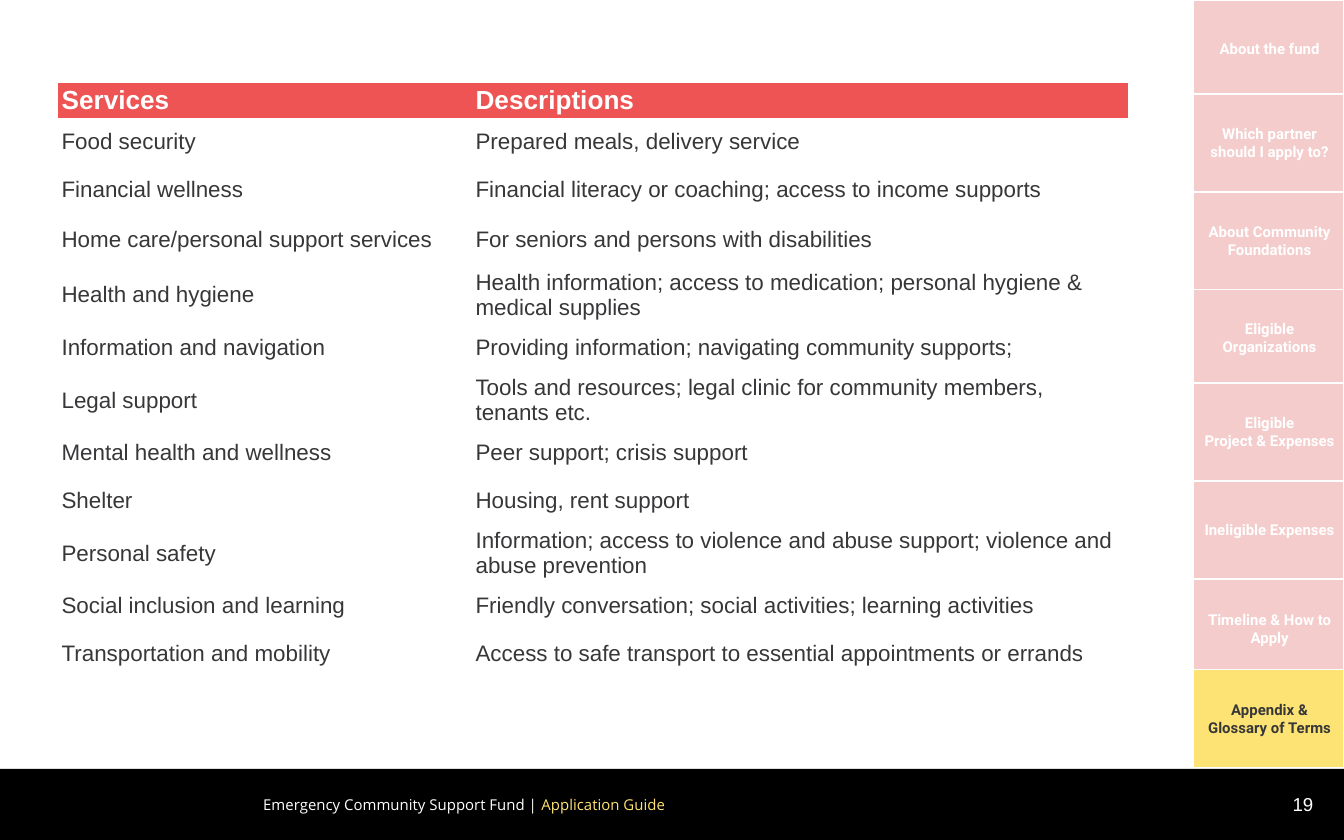
from pptx import Presentation
from pptx.dml.color import RGBColor
from pptx.enum import shapes, text
from pptx.oxml import ns
from pptx.util import Pt

WHITE = RGBColor(0xFF, 0xFF, 0xFF)
BLACK = RGBColor(0x00, 0x00, 0x00)
CHARCOAL = RGBColor(0x37, 0x37, 0x39)
PINK = RGBColor(0xF4, 0xCC, 0xCC)
YELLOW = RGBColor(0xFD, 0xE3, 0x73)
GUIDE_YELLOW = RGBColor(0xFF, 0xE3, 0x74)
RED = RGBColor(0xEE, 0x54, 0x54)
PLAIN_TABLE = "{2D5ABB26-0587-4C30-8999-92F81FD0307C}"

TABS = [
    (0, "About the fund"),
    (50.4, "Which partner should I apply to?"),
    (103, "About Community Foundations"),
    (155, "Eligible\nOrganizations"),
    (205.2, "Eligible\nProject & Expenses"),
    (257.8, "Ineligible Expenses"),
    (310.6, "Timeline & How to Apply"),
    (358.8, "Appendix & Glossary of Terms"),
]

HEADER, SINGLE, MEDIUM, DOUBLE = 18.8, 25.5, 28.2, 31
SERVICES = [
    (HEADER, "Services", "Descriptions"),
    (SINGLE, "Food security", "Prepared meals, delivery service"),
    (SINGLE, "Financial wellness", "Financial literacy or coaching; access to income supports"),
    (MEDIUM, "Home care/personal support services", "For seniors and persons with disabilities"),
    (DOUBLE, "Health and hygiene",
     "Health information; access to medication; personal hygiene & medical supplies"),
    (SINGLE, "Information and navigation", "Providing information; navigating community supports;"),
    (DOUBLE, "Legal support",
     "Tools and resources; legal clinic for community members, tenants etc."),
    (SINGLE, "Mental health and wellness", "Peer support; crisis support"),
    (SINGLE, "Shelter", "Housing, rent support"),
    (DOUBLE, "Personal safety",
     "Information; access to violence and abuse support; violence and abuse prevention"),
    (SINGLE, "Social inclusion and learning",
     "Friendly conversation; social activities; learning activities"),
    (SINGLE, "Transportation and mobility",
     "Access to safe transport to essential appointments or errands"),
]


class GuidePage:
    def __init__(self, deck):
        self.page = deck.slides.add_slide(deck.slide_layouts[6])
        self.body_font = "Arial"
        self.tab_font = "Roboto"
        self.footer_font = "Open Sans"

    def style(self, span, font, size, color, bold=False):
        span.font.name = font
        span.font.size = Pt(size)
        span.font.color.rgb = color
        span.font.bold = bold

    def block(self, left, top, width, height, fill, outline=None):
        box = self.page.shapes.add_shape(
            shapes.MSO_SHAPE.RECTANGLE, Pt(left), Pt(top), Pt(width), Pt(height))
        box.shadow.inherit = False
        box.fill.solid()
        box.fill.fore_color.rgb = fill
        if outline is None:
            box.line.fill.background()
        else:
            box.line.color.rgb = outline
            box.line.width = Pt(0.75)

    def label(self, left, top, width, height, pieces, font, size, bold=False,
              align=text.PP_ALIGN.LEFT, anchor=text.MSO_ANCHOR.MIDDLE):
        box = self.page.shapes.add_textbox(Pt(left), Pt(top), Pt(width), Pt(height))
        frame = box.text_frame
        frame.word_wrap = True
        frame.vertical_anchor = anchor
        frame.margin_left = frame.margin_right = Pt(7.2)
        frame.margin_top = frame.margin_bottom = Pt(7.2)
        para = frame.paragraphs[0]
        para.alignment = align
        for words, color in pieces:
            lines = words.split("\n")
            for number, line in enumerate(lines):
                if number:
                    para.add_line_break()
                span = para.add_run()
                span.text = line
                self.style(span, font, size, color, bold)

    def tab(self, top, words, active):
        self.block(639.4, top, 80.6, 52.5, YELLOW if active else PINK, WHITE)
        self.label(637, top + 5.8, 86.4, 40.3, [(words, CHARCOAL if active else WHITE)],
                   self.tab_font, 8, True, text.PP_ALIGN.CENTER)

    def footer(self, number):
        self.block(-5.8, 412, 733, 40.3, BLACK)
        self.label(133.9, 421.2, 359.3, 21.6,
                   [("Emergency Community Support Fund | ", WHITE),
                    ("Application Guide", GUIDE_YELLOW)],
                   self.footer_font, 8, anchor=text.MSO_ANCHOR.TOP)
        self.label(667.4, 413.3, 43.2, 34.6, [(number, WHITE)],
                   self.body_font, 10, align=text.PP_ALIGN.RIGHT)

    def table(self, left, top, widths, rows):
        frame = self.page.shapes.add_table(
            len(rows), len(widths), Pt(left), Pt(top),
            Pt(sum(widths)), Pt(sum(row[0] for row in rows)))
        for style_id in frame.element.iter(ns.qn("a:tableStyleId")):
            style_id.text = PLAIN_TABLE
        grid = frame.table
        grid.horz_banding = False
        for column, width in zip(grid.columns, widths):
            column.width = Pt(width)
        for index, (height, *entries) in enumerate(rows):
            grid.rows[index].height = Pt(height)
            for cell, words in zip(grid.rows[index].cells, entries):
                self.fill_cell(cell, words, index == 0)

    def fill_cell(self, cell, words, heading):
        cell.margin_left = cell.margin_right = Pt(2)
        cell.margin_top = cell.margin_bottom = Pt(0)
        cell.vertical_anchor = text.MSO_ANCHOR.MIDDLE
        cell.text_frame.text = words
        span = cell.text_frame.paragraphs[0].runs[0]
        if heading:
            cell.fill.solid()
            cell.fill.fore_color.rgb = RED
            self.style(span, self.body_font, 14, WHITE, True)
        else:
            cell.fill.background()
            self.style(span, self.body_font, 12, CHARCOAL)


def main():
    deck = Presentation()
    deck.slide_width = Pt(720)
    deck.slide_height = Pt(450)
    guide = GuidePage(deck)
    for index, (top, words) in enumerate(TABS):
        guide.tab(top, words, index == len(TABS) - 1)
    guide.footer("19")
    guide.table(31, 44.6, [221.8, 351.4], SERVICES)
    deck.save("out.pptx")


if __name__ == "__main__":
    main()
